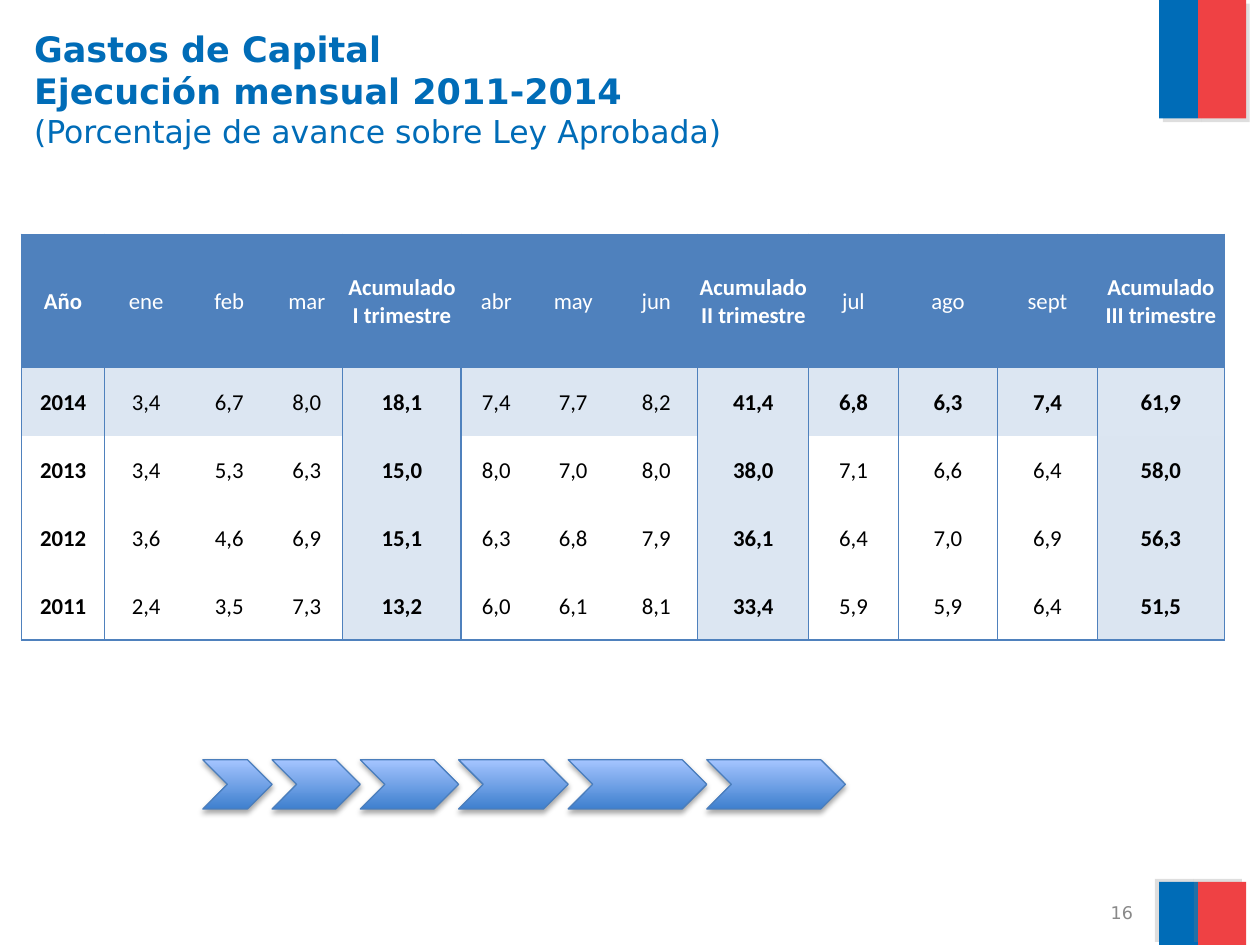
"""Build the slide on monthly capital spending execution."""
from itertools import accumulate
from typing import NamedTuple

from lxml import etree
from pptx import Presentation
from pptx.dml.color import RGBColor
from pptx.enum.shapes import MSO_SHAPE as Shape
from pptx.enum.text import MSO_ANCHOR as Anchor, PP_ALIGN as Align
from pptx.oxml.ns import qn
from pptx.util import Inches, Pt

BLUE, RED, WHITE, BLACK = "006CB7", "EF4144", "FFFFFF", "000000"
HEADER_FILL, LIGHT_FILL, LAST_FILL = "4F81BD", "DCE6F2", "DBE5F1"
TITLE_FONT, TABLE_FONT = "DejaVu Sans", "Calibri"

HEADERS = [
    "Año", "ene", "feb", "mar", "Acumulado I trimestre", "abr", "may", "jun",
    "Acumulado II trimestre", "jul", "ago", "sept", "Acumulado III trimestre",
]
ROWS = [
    "2014 3,4 6,7 8,0 18,1 7,4 7,7 8,2 41,4 6,8 6,3 7,4 61,9".split(),
    "2013 3,4 5,3 6,3 15,0 8,0 7,0 8,0 38,0 7,1 6,6 6,4 58,0".split(),
    "2012 3,6 4,6 6,9 15,1 6,3 6,8 7,9 36,1 6,4 7,0 6,9 56,3".split(),
    "2011 2,4 3,5 7,3 13,2 6,0 6,1 8,1 33,4 5,9 5,9 6,4 51,5".split(),
]
COLUMN_WIDTHS = [0.66, 0.66, 0.66, 0.57, 0.94, 0.56, 0.66, 0.66, 0.88, 0.71, 0.79, 0.79, 1.01]
ROW_HEIGHTS = [1.06, 0.54, 0.54, 0.54, 0.54]
EDGE_WIDTHS = [1, 0.5, 0, 0, 0.5, 1, 0, 0, 0.5, 0.5, 0.5, 0.5, 0.5, 1]
TOTAL_COLUMNS = (4, 8, 12)
FIRST_BOLD_MONTH = 9
NO_STYLE = "{2D5ABB26-0587-4C30-8999-92F81FD0307C}"
CHEVRON_WIDTHS = [0.55, 0.7, 0.78, 0.87, 1.1, 1.1]


class Box(NamedTuple):
    left: float
    top: float
    width: float
    height: float

    def emu(self) -> list:
        return [Inches(value) for value in self]


class Shadow(NamedTuple):
    color: str
    opacity: int
    blur: float
    distance: float
    angle: int


class Band(NamedTuple):
    box: Box
    color: str
    shadow: Shadow


TOP_SHADOW = Shadow("808080", 25, 0, 3, 45)
BOTTOM_SHADOW = Shadow("808080", 25, 0, 3, 215)
CHEVRON_SHADOW = Shadow(BLACK, 35, 3.1, 1.8, 90)
BANDS = [
    Band(Box(9.2, -0.01, 0.31, 0.95), BLUE, TOP_SHADOW),
    Band(Box(9.51, 0, 0.38, 0.94), RED, TOP_SHADOW),
    Band(Box(9.2, 7, 0.31, 0.5), BLUE, BOTTOM_SHADOW),
    Band(Box(9.51, 7, 0.38, 0.5), RED, BOTTOM_SHADOW),
]


def rgb(color: str) -> RGBColor:
    return RGBColor.from_string(color)


def style_run(run, name: str, size: float, color: str, bold: bool = False) -> None:
    run.font.name = name
    run.font.size = Pt(size)
    run.font.bold = bold
    run.font.color.rgb = rgb(color)


def add_shadow(shape, shadow: Shadow) -> None:
    shape.shadow.inherit = False
    effects = shape.element.spPr.find(qn("a:effectLst"))
    outer = etree.SubElement(
        effects, qn("a:outerShdw"), blurRad=str(Pt(shadow.blur)), dist=str(Pt(shadow.distance)),
        dir=str(shadow.angle * 60000), algn="ctr", rotWithShape="0")
    color = etree.SubElement(outer, qn("a:srgbClr"), val=shadow.color)
    etree.SubElement(color, qn("a:alpha"), val=str(shadow.opacity * 1000))


def add_band(slide, band: Band) -> None:
    shape = slide.shapes.add_shape(Shape.RECTANGLE, *band.box.emu())
    shape.fill.solid()
    shape.fill.fore_color.rgb = rgb(band.color)
    shape.line.fill.background()
    add_shadow(shape, band.shadow)


def add_chevron(slide, box: Box) -> None:
    shape = slide.shapes.add_shape(Shape.CHEVRON, *box.emu())
    shape.fill.gradient()
    shape.fill.gradient_angle = 90
    for stop, color, position in zip(shape.fill.gradient_stops, ("3F80CE", "A4C4FF"), (0, 1)):
        stop.color.rgb = rgb(color)
        stop.position = position
    shape.line.color.rgb = rgb("4B7EBC")
    shape.line.width = Pt(0.75)
    add_shadow(shape, CHEVRON_SHADOW)


def set_title(slide) -> None:
    title = slide.shapes.title
    title.left, title.top, title.width, title.height = Box(0.17, 0.17, 8.93, 1.25).emu()
    frame = title.text_frame
    frame.text = ("Gastos de Capital\vEjecución mensual 2011-2014\v"
                  "(Porcentaje de avance sobre Ley Aprobada)")
    frame.vertical_anchor = Anchor.TOP
    paragraph = frame.paragraphs[0]
    paragraph.alignment = Align.LEFT
    for run, size, bold in zip(paragraph.runs, (20, 20, 18), (True, True, False)):
        style_run(run, TITLE_FONT, size, BLUE, bold)


def add_page_number(slide) -> None:
    frame = slide.shapes.add_textbox(*Box(6.76, 7.14, 2.33, 0.21).emu()).text_frame
    frame.word_wrap = True
    frame.vertical_anchor = Anchor.MIDDLE
    frame.text = "16"
    frame.paragraphs[0].alignment = Align.RIGHT
    style_run(frame.paragraphs[0].runs[0], TITLE_FONT, 10, "898989")


def set_borders(properties, widths: dict[str, float]) -> None:
    for index, (side, width) in enumerate(widths.items()):
        line = etree.Element(qn(f"a:{side}"), w=str(Pt(width)))
        if width:
            fill = etree.SubElement(line, qn("a:solidFill"))
            etree.SubElement(fill, qn("a:srgbClr"), val=HEADER_FILL)
        else:
            etree.SubElement(line, qn("a:noFill"))
        properties.insert(index, line)


def cell_fill(row: int, column: int) -> str | None:
    if row == 0:
        return HEADER_FILL
    if row == 1 or column in TOTAL_COLUMNS[:2]:
        return LIGHT_FILL
    return LAST_FILL if column == TOTAL_COLUMNS[2] else None


def fill_cell(cell, row: int, column: int, text: str) -> None:
    cell.text = text
    cell.vertical_anchor = Anchor.MIDDLE
    cell.margin_left = cell.margin_right = cell.margin_top = Inches(0.01)
    cell.margin_bottom = 0
    bold = column in (0, *TOTAL_COLUMNS) or (row == 1 and column >= FIRST_BOLD_MONTH)
    paragraph = cell.text_frame.paragraphs[0]
    paragraph.alignment = Align.CENTER
    style_run(paragraph.runs[0], TABLE_FONT, 13, BLACK if row else WHITE, bold)
    color = cell_fill(row, column)
    if color:
        cell.fill.solid()
        cell.fill.fore_color.rgb = rgb(color)
    else:
        cell.fill.background()


def add_spending_table(slide) -> None:
    grid = [HEADERS, *ROWS]
    frame = slide.shapes.add_table(len(grid), len(HEADERS), *Box(0.17, 1.86, 9.56, 3.24).emu())
    table = frame.table
    table.horz_banding = False
    next(frame.element.iter(qn("a:tableStyleId"))).text = NO_STYLE
    for column, width in zip(table.columns, COLUMN_WIDTHS):
        column.width = Inches(width)
    for row, height in zip(table.rows, ROW_HEIGHTS):
        row.height = Inches(height)
    for row, texts in enumerate(grid):
        for column, text in enumerate(texts):
            fill_cell(table.cell(row, column), row, column, text)
    for index, properties in enumerate(frame.element.iter(qn("a:tcPr"))):
        row, column = divmod(index, len(HEADERS))
        set_borders(properties, {
            "lnL": EDGE_WIDTHS[column], "lnR": EDGE_WIDTHS[column + 1],
            "lnT": int(row == 0), "lnB": int(row == len(ROWS))})


def main() -> None:
    presentation = Presentation()
    presentation.slide_width, presentation.slide_height = Inches(10), Inches(7.5)
    slide = presentation.slides.add_slide(presentation.slide_layouts[5])
    for band in BANDS:
        add_band(slide, band)
    set_title(slide)
    add_page_number(slide)
    for left, width in zip(accumulate(CHEVRON_WIDTHS, initial=1.61), CHEVRON_WIDTHS):
        add_chevron(slide, Box(left, 6.03, width, 0.39))
    add_spending_table(slide)
    presentation.save("out.pptx")


if __name__ == "__main__":
    main()
